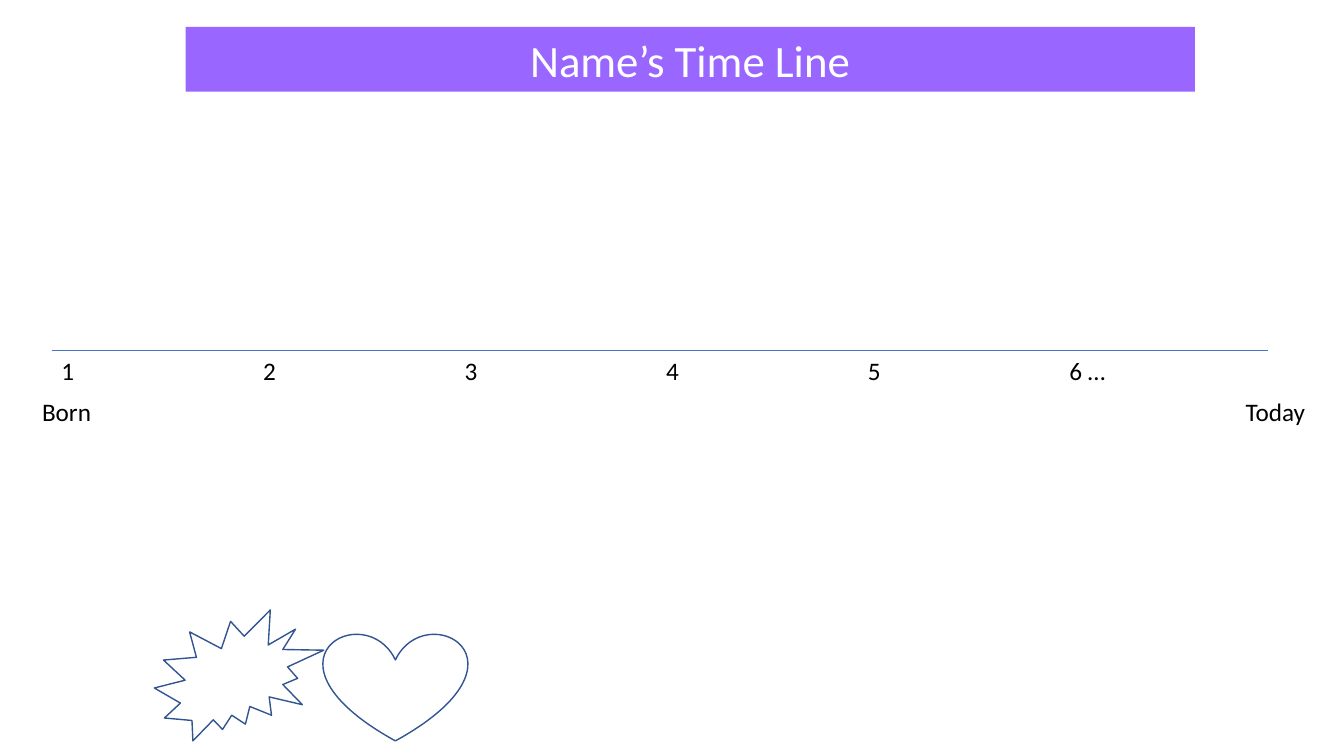
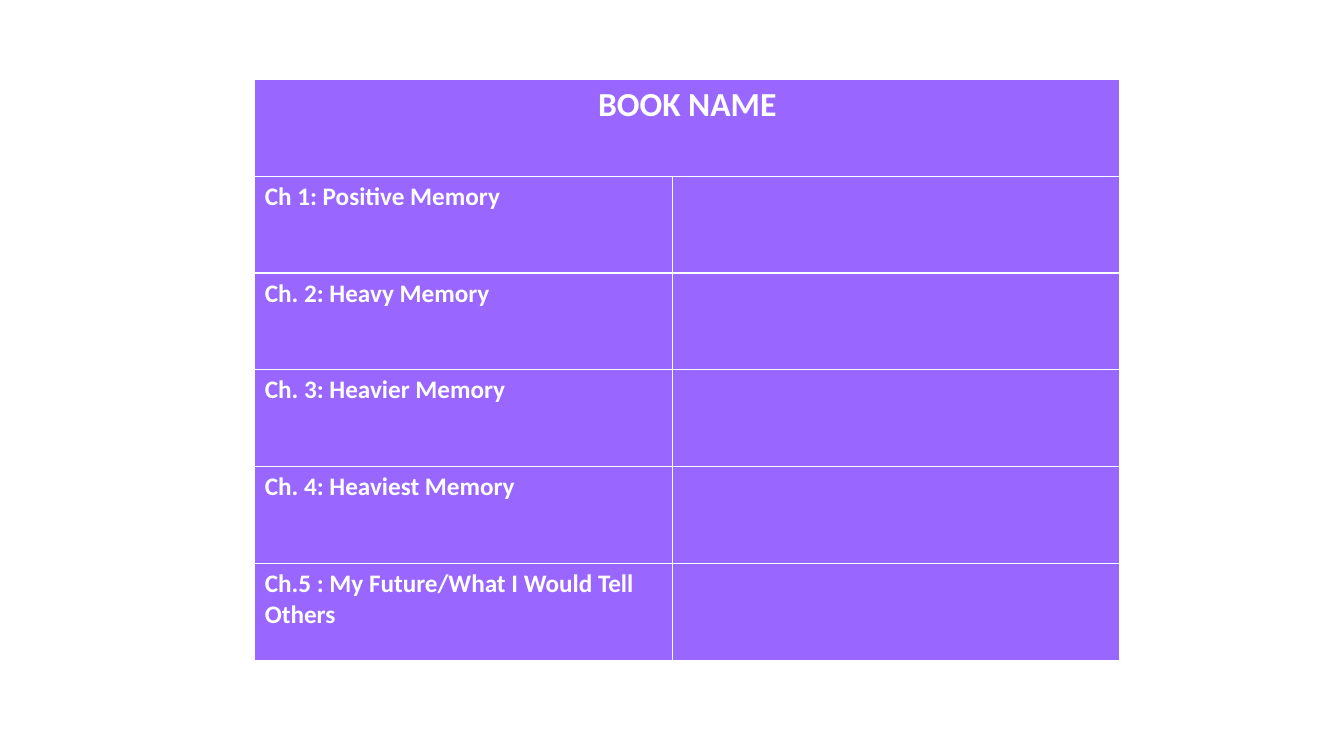
from lxml.etree import SubElement
from pptx import Presentation
from pptx.dml.color import RGBColor
from pptx.enum.shapes import MSO_CONNECTOR, MSO_SHAPE
from pptx.enum.text import MSO_ANCHOR, MSO_AUTO_SIZE, PP_ALIGN
from pptx.oxml.ns import qn
from pptx.util import Cm, Pt

PURPLE = RGBColor(0x99, 0x66, 0xFF)
WHITE = RGBColor(0xFF, 0xFF, 0xFF)
BLACK = RGBColor(0x00, 0x00, 0x00)
BLUE = RGBColor(0x44, 0x72, 0xC4)
DARK_BLUE = RGBColor(0x32, 0x54, 0x91)
FONT = "Calibri"
TITLE_ONLY, BLANK = 5, 6


class Deck:
    def __init__(self):
        self.presentation = Presentation()
        self.presentation.slide_width = Cm(33.87)
        self.presentation.slide_height = Cm(19.05)
        self.slide = None

    def add_slide(self, layout):
        layouts = self.presentation.slide_layouts
        self.slide = self.presentation.slides.add_slide(layouts[layout])

    def style(self, paragraph, size, color, bold=False, align=PP_ALIGN.LEFT):
        paragraph.alignment = align
        font = paragraph.font
        font.name = FONT
        font.size = Pt(size)
        font.bold = bold
        font.color.rgb = color

    def title(self, text, left, top, width, height):
        title = self.slide.shapes.title
        title.left, title.top = Cm(left), Cm(top)
        title.width, title.height = Cm(width), Cm(height)
        title.fill.solid()
        title.fill.fore_color.rgb = PURPLE
        frame = title.text_frame
        frame.text = text
        frame.auto_size = MSO_AUTO_SIZE.NONE
        frame.vertical_anchor = MSO_ANCHOR.MIDDLE
        self.style(frame.paragraphs[0], 32, WHITE, align=PP_ALIGN.CENTER)

    def text(self, text, left, top, width, tab_step=0):
        box = self.slide.shapes.add_textbox(Cm(left), Cm(top), Cm(width), Cm(1.02))
        frame = box.text_frame
        frame.word_wrap = True
        frame.text = text
        paragraph = frame.paragraphs[0]
        if tab_step:
            properties = paragraph._p.get_or_add_pPr()
            tabs = SubElement(properties, qn("a:tabLst"))
            for number in range(1, text.count("\t") + 1):
                position = str(Cm(number * tab_step))
                SubElement(tabs, qn("a:tab"), pos=position, algn="l")
        self.style(paragraph, 18, BLACK)

    def line(self, left, top, width):
        line = self.slide.shapes.add_connector(
            MSO_CONNECTOR.STRAIGHT, Cm(left), Cm(top), Cm(left + width), Cm(top))
        line.line.color.rgb = BLUE
        line.line.width = Pt(0.5)
        SubElement(line._element.spPr, qn("a:effectLst"))

    def sticker(self, kind, left, top, width, height):
        shape = self.slide.shapes.add_shape(
            kind, Cm(left), Cm(top), Cm(width), Cm(height))
        shape.shadow.inherit = False
        shape.fill.solid()
        shape.fill.fore_color.rgb = WHITE
        shape.line.color.rgb = DARK_BLUE
        shape.line.width = Pt(1)

    def cell(self, cell, text, size, align=PP_ALIGN.LEFT):
        cell.fill.solid()
        cell.fill.fore_color.rgb = PURPLE
        cell.text = text
        self.style(cell.text_frame.paragraphs[0], size, WHITE, True, align)

    def chapter_table(self, heading, chapters, left, top, widths, row_height):
        rows = len(chapters) + 1
        table = self.slide.shapes.add_table(
            rows, len(widths), Cm(left), Cm(top),
            Cm(sum(widths)), Cm(rows * row_height)).table
        table.first_col = True
        table.horz_banding = False
        for column, width in zip(table.columns, widths):
            column.width = Cm(width)
        for row in table.rows:
            row.height = Cm(row_height)
        table.cell(0, 0).merge(table.cell(0, len(widths) - 1))
        self.cell(table.cell(0, 0), heading, 24, PP_ALIGN.CENTER)
        for row, chapter in enumerate(chapters, 1):
            self.cell(table.cell(row, 0), chapter, 18)
            self.cell(table.cell(row, 1), "", 18)


def main():
    deck = Deck()

    deck.add_slide(TITLE_ONLY)
    deck.title("Name’s Time Line", 4.68, 0.68, 25.43, 1.63)
    deck.line(1.3, 8.84, 30.66)
    deck.text("Born", 0.81, 9.86, 2.03)
    deck.text("Today", 31.14, 9.86, 2.03)
    deck.sticker(MSO_SHAPE.EXPLOSION2, 3.89, 15.37, 4.27, 3.3)
    deck.sticker(MSO_SHAPE.HEART, 8.15, 15.95, 3.63, 2.72)
    deck.text("\t".join(["1", "2", "3", "4", "5", "6 …"]), 1.3, 8.84, 31.3, tab_step=5.08)

    deck.add_slide(BLANK)
    deck.chapter_table(
        "BOOK NAME",
        ["Ch 1: Positive Memory",
         "Ch. 2: Heavy Memory",
         "Ch. 3: Heavier Memory",
         "Ch. 4: Heaviest Memory",
         "Ch.5 : My Future/What I Would Tell Others"],
        6.42, 2, [10.52, 11.28], 2.44)

    deck.presentation.save("out.pptx")


if __name__ == "__main__":
    main()
